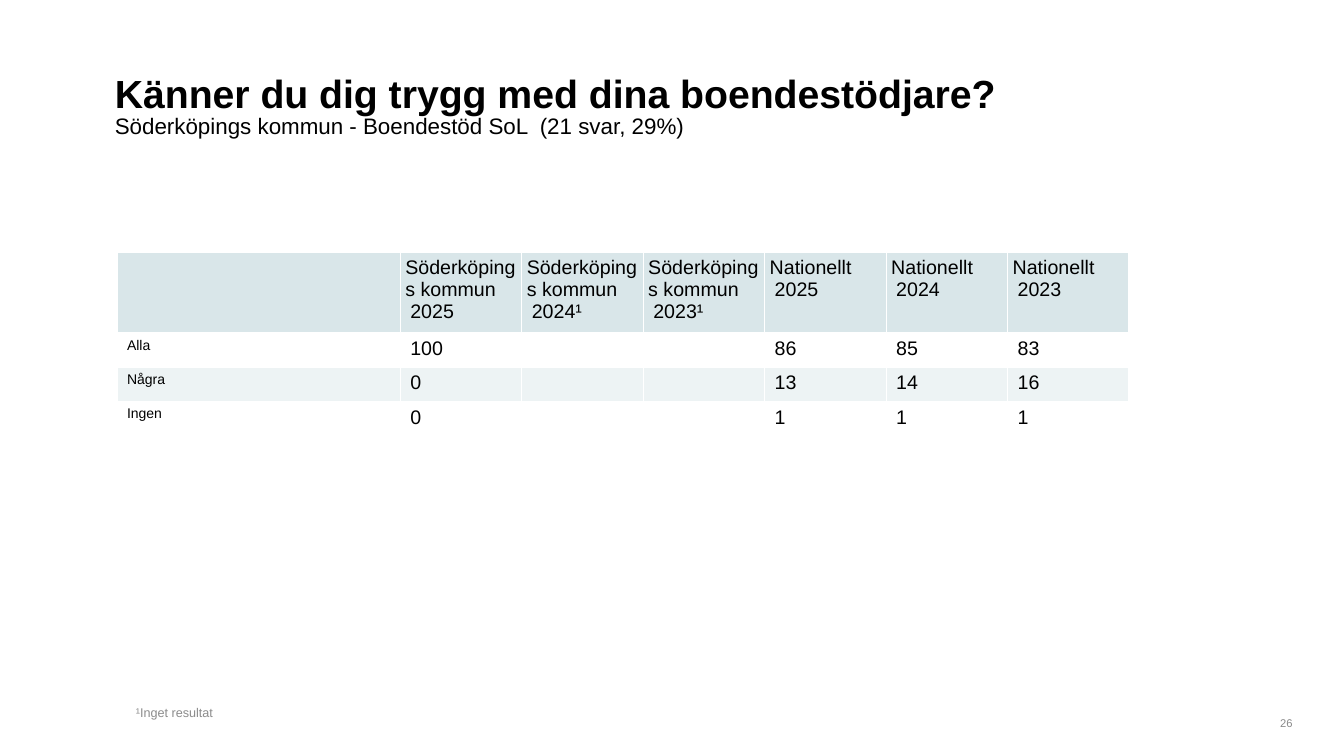
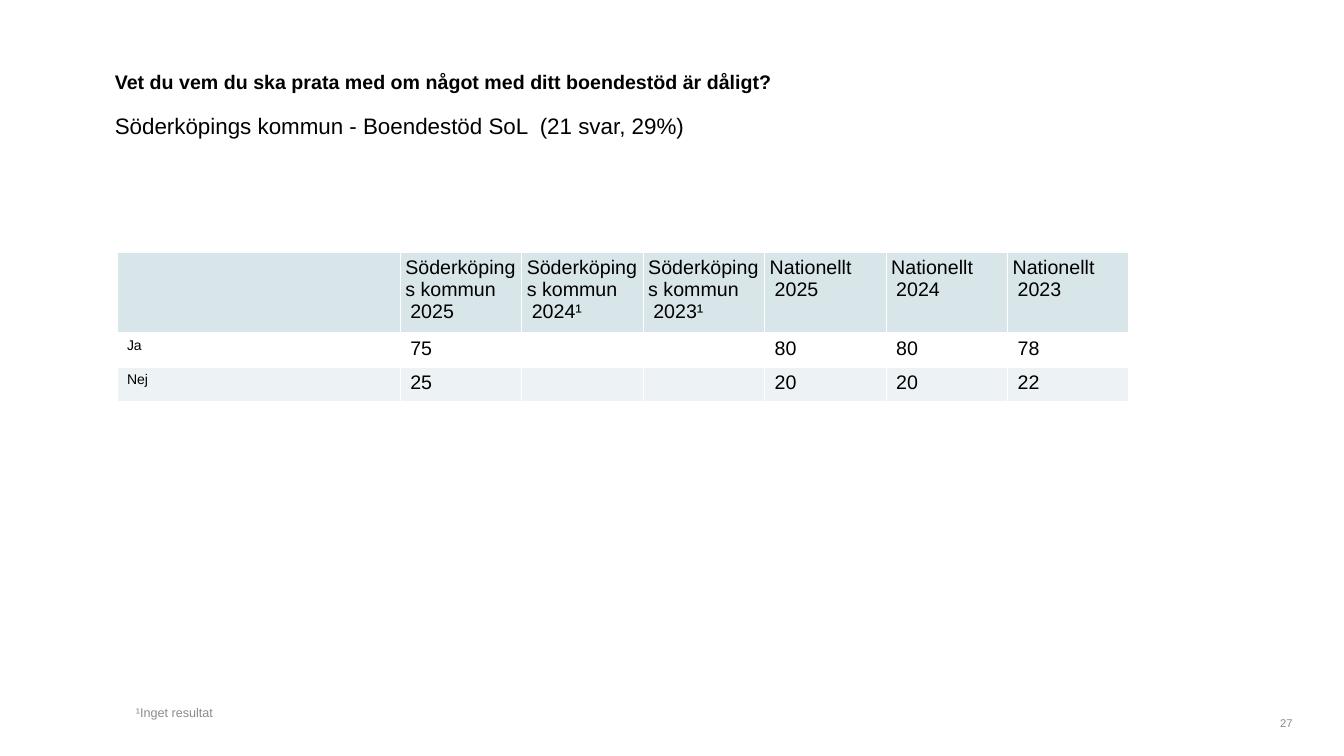
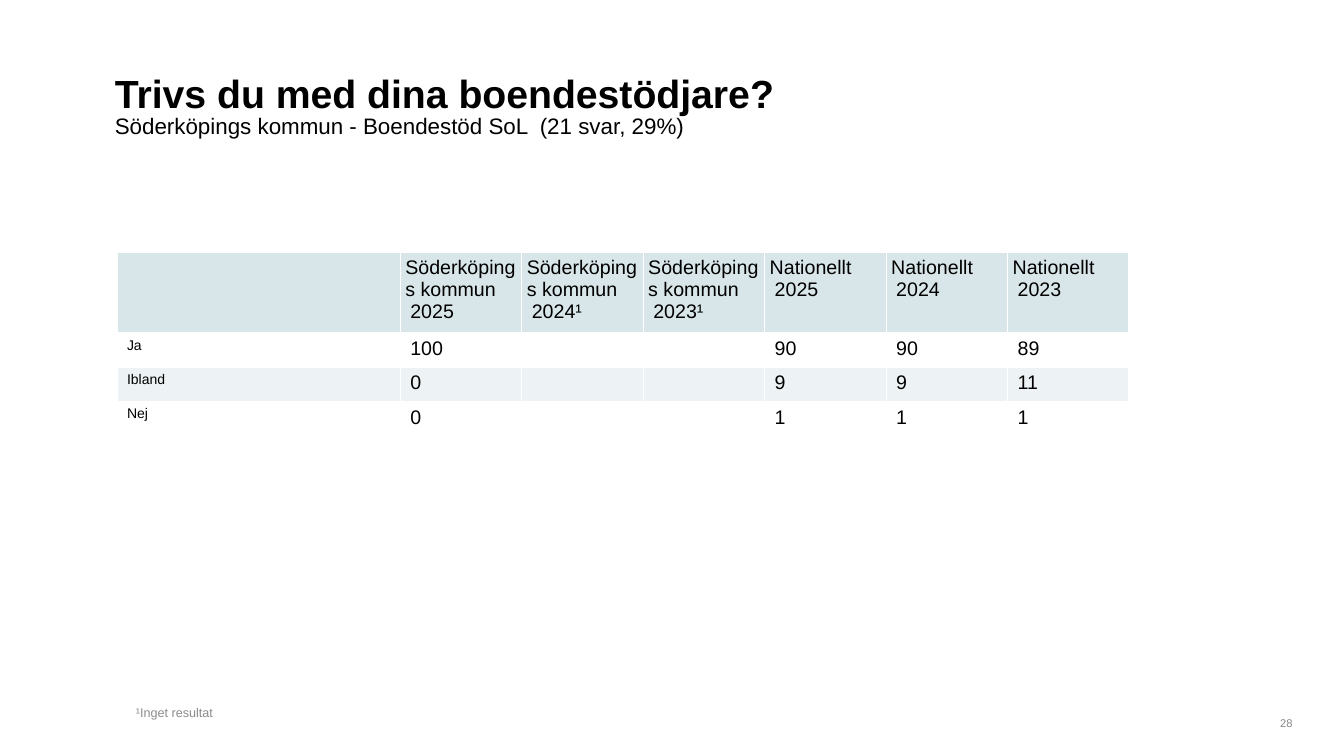
"""Build three survey result slides with a shared title, table and footer style."""
from dataclasses import dataclass

from lxml import etree
from pptx import Presentation
from pptx.dml.color import RGBColor
from pptx.enum.text import MSO_ANCHOR, MSO_AUTO_SIZE, PP_ALIGN
from pptx.oxml.ns import qn
from pptx.presentation import Presentation as Deck
from pptx.slide import Slide
from pptx.table import _Cell as Cell
from pptx.text.text import _Paragraph as Paragraph
from pptx.util import Inches, Pt

LEFT, RIGHT = PP_ALIGN.LEFT, PP_ALIGN.RIGHT
TOP, BOTTOM = MSO_ANCHOR.TOP, MSO_ANCHOR.BOTTOM
FIXED, GROW = MSO_AUTO_SIZE.NONE, MSO_AUTO_SIZE.SHAPE_TO_FIT_TEXT
BLANK_LAYOUT = 6


@dataclass(frozen=True)
class Theme:
    font: str = "Arial"
    ink: str = "000000"
    note: str = "8C8C8C"
    number: str = "898989"
    header: str = "D9E6E9"
    band: str = "EDF3F4"
    border: str = "FFFFFF"
    title_size: int = 28
    long_title_size: int = 14
    subtitle_size: int = 16
    table_size: int = 14
    label_size: int = 10
    note_size: int = 9
    number_size: int = 8


@dataclass(frozen=True)
class TextStyle:
    size: int
    color: str
    bold: bool = False


@dataclass(frozen=True)
class BoxStyle:
    left: float
    top: float
    width: float
    height: float
    anchor: MSO_ANCHOR = TOP
    align: PP_ALIGN = LEFT
    auto_size: MSO_AUTO_SIZE = FIXED
    margin_top: float = 0.05


@dataclass(frozen=True)
class Answer:
    label: str
    values: tuple[str, ...]


@dataclass(frozen=True)
class Question:
    title: str
    title_size: int
    answers: tuple[Answer, ...]


THEME = Theme()
TITLE_BOX = BoxStyle(1.04, 0.62, 11.25, 0.42, auto_size=GROW, margin_top=0.07)
SUBTITLE_BOX = BoxStyle(1.04, 1.04, 11.25, 0.42, auto_size=GROW, margin_top=0.07)
NOTE_BOX = BoxStyle(1.25, 3.23, 7.6, 3.96, anchor=BOTTOM)
NUMBER_BOX = BoxStyle(12.5, 7.08, 0.42, 0.21, anchor=BOTTOM, align=RIGHT)

SUBTITLE = "Söderköpings kommun - Boendestöd SoL  (21 svar, 29%)"
NOTE = "¹Inget resultat"
FIRST_NUMBER = 26
MUNICIPALITY, NATION = "Söderköpings kommun", "Nationellt"
HEADERS = (
    (MUNICIPALITY, "2025"), (MUNICIPALITY, "2024¹"), (MUNICIPALITY, "2023¹"),
    (NATION, "2025"), (NATION, "2024"), (NATION, "2023"),
)

TABLE_LEFT, TABLE_TOP, TABLE_WIDTH = 1.16, 2.5, 10.04
LABEL_WIDTH = 2.81
HEADER_HEIGHT, ROW_HEIGHT = 0.8, 0.34
CELL_MARGIN = CELL_INDENT = 0.05

QUESTIONS = (
    Question("Känner du dig trygg med dina boendestödjare?", THEME.title_size, (
        Answer("Alla", ("100", "", "", "86", "85", "83")),
        Answer("Några", ("0", "", "", "13", "14", "16")),
        Answer("Ingen", ("0", "", "", "1", "1", "1")),
    )),
    Question("Vet du vem du ska prata med om något med ditt boendestöd är dåligt?",
             THEME.long_title_size, (
        Answer("Ja", ("75", "", "", "80", "80", "78")),
        Answer("Nej", ("25", "", "", "20", "20", "22")),
    )),
    Question("Trivs du med dina boendestödjare?", THEME.title_size, (
        Answer("Ja", ("100", "", "", "90", "90", "89")),
        Answer("Ibland", ("0", "", "", "9", "9", "11")),
        Answer("Nej", ("0", "", "", "1", "1", "1")),
    )),
)


def write(paragraph: Paragraph, text: str, style: TextStyle) -> None:
    """Add one formatted span to a paragraph."""
    span = paragraph.add_run()
    span.text = text
    formats = {"name": THEME.font, "size": Pt(style.size), "bold": style.bold}
    for name, value in formats.items():
        setattr(span.font, name, value)
    span.font.color.rgb = RGBColor.from_string(style.color)


def add_text(page: Slide, text: str, place: BoxStyle, style: TextStyle) -> None:
    """Place a text box on the page."""
    box = page.shapes.add_textbox(Inches(place.left), Inches(place.top),
                                  Inches(place.width), Inches(place.height))
    formats = {
        "word_wrap": True,
        "auto_size": place.auto_size,
        "vertical_anchor": place.anchor,
        "margin_top": Inches(place.margin_top),
    }
    for name, value in formats.items():
        setattr(box.text_frame, name, value)
    paragraph = box.text_frame.paragraphs[0]
    paragraph.alignment = place.align
    write(paragraph, text, style)


def add_borders(cell: Cell) -> None:
    """Draw a thin line on every side of a cell."""
    properties = cell._tc.get_or_add_tcPr()
    for side in ("a:lnL", "a:lnR", "a:lnT", "a:lnB"):
        line = etree.SubElement(properties, qn(side), w=str(Pt(1)))
        fill = etree.SubElement(line, qn("a:solidFill"))
        etree.SubElement(fill, qn("a:srgbClr"), val=THEME.border)


def fill_cell(cell: Cell, lines: tuple[str, ...], size: int, color: str | None) -> None:
    """Write the lines of a cell, indent the last one and set borders and fill."""
    add_borders(cell)
    if color:
        cell.fill.solid()
        cell.fill.fore_color.rgb = RGBColor.from_string(color)
    else:
        cell.fill.background()
    vertical = CELL_MARGIN if any(lines) else 0
    margins = {"left": CELL_MARGIN, "right": CELL_MARGIN, "top": vertical, "bottom": vertical}
    for side, value in margins.items():
        setattr(cell, f"margin_{side}", Inches(value))
    if not any(lines):
        return
    frame = cell.text_frame
    for index, line in enumerate(lines):
        paragraph = frame.add_paragraph() if index else frame.paragraphs[0]
        write(paragraph, line, TextStyle(size, THEME.ink))
    paragraph._p.get_or_add_pPr().set("marL", str(Inches(CELL_INDENT)))


def add_answer_table(page: Slide, answers: tuple[Answer, ...]) -> None:
    """Draw the answer shares as a banded table."""
    height = HEADER_HEIGHT + ROW_HEIGHT * len(answers)
    table = page.shapes.add_table(
        len(answers) + 1, len(HEADERS) + 1, Inches(TABLE_LEFT), Inches(TABLE_TOP),
        Inches(TABLE_WIDTH), Inches(height)).table
    for name in ("first_row", "horz_banding"):
        setattr(table, name, False)
    value_width = (TABLE_WIDTH - LABEL_WIDTH) / len(HEADERS)
    for index, column in enumerate(table.columns):
        column.width = Inches(value_width if index else LABEL_WIDTH)
    for index, row in enumerate(table.rows):
        row.height = Inches(ROW_HEIGHT if index else HEADER_HEIGHT)

    for column, lines in enumerate((("",), *HEADERS)):
        fill_cell(table.cell(0, column), lines, THEME.table_size, THEME.header)
    for row, answer in enumerate(answers, start=1):
        color = None if row % 2 else THEME.band
        for column, text in enumerate((answer.label, *answer.values)):
            size = THEME.table_size if column else THEME.label_size
            fill_cell(table.cell(row, column), (text,), size, color)


def add_question(deck: Deck, question: Question, number: int) -> None:
    """Add the slide of one survey question."""
    page = deck.slides.add_slide(deck.slide_layouts[BLANK_LAYOUT])
    add_text(page, question.title, TITLE_BOX,
             TextStyle(question.title_size, THEME.ink, bold=True))
    add_text(page, SUBTITLE, SUBTITLE_BOX, TextStyle(THEME.subtitle_size, THEME.ink))
    add_answer_table(page, question.answers)
    add_text(page, NOTE, NOTE_BOX, TextStyle(THEME.note_size, THEME.note))
    add_text(page, str(number), NUMBER_BOX, TextStyle(THEME.number_size, THEME.number))


def main() -> None:
    """Create the deck and save it."""
    deck = Presentation()
    deck.slide_width, deck.slide_height = Inches(13.33), Inches(7.5)
    for number, question in enumerate(QUESTIONS, start=FIRST_NUMBER):
        add_question(deck, question, number)
    deck.save("out.pptx")


if __name__ == "__main__":
    main()
